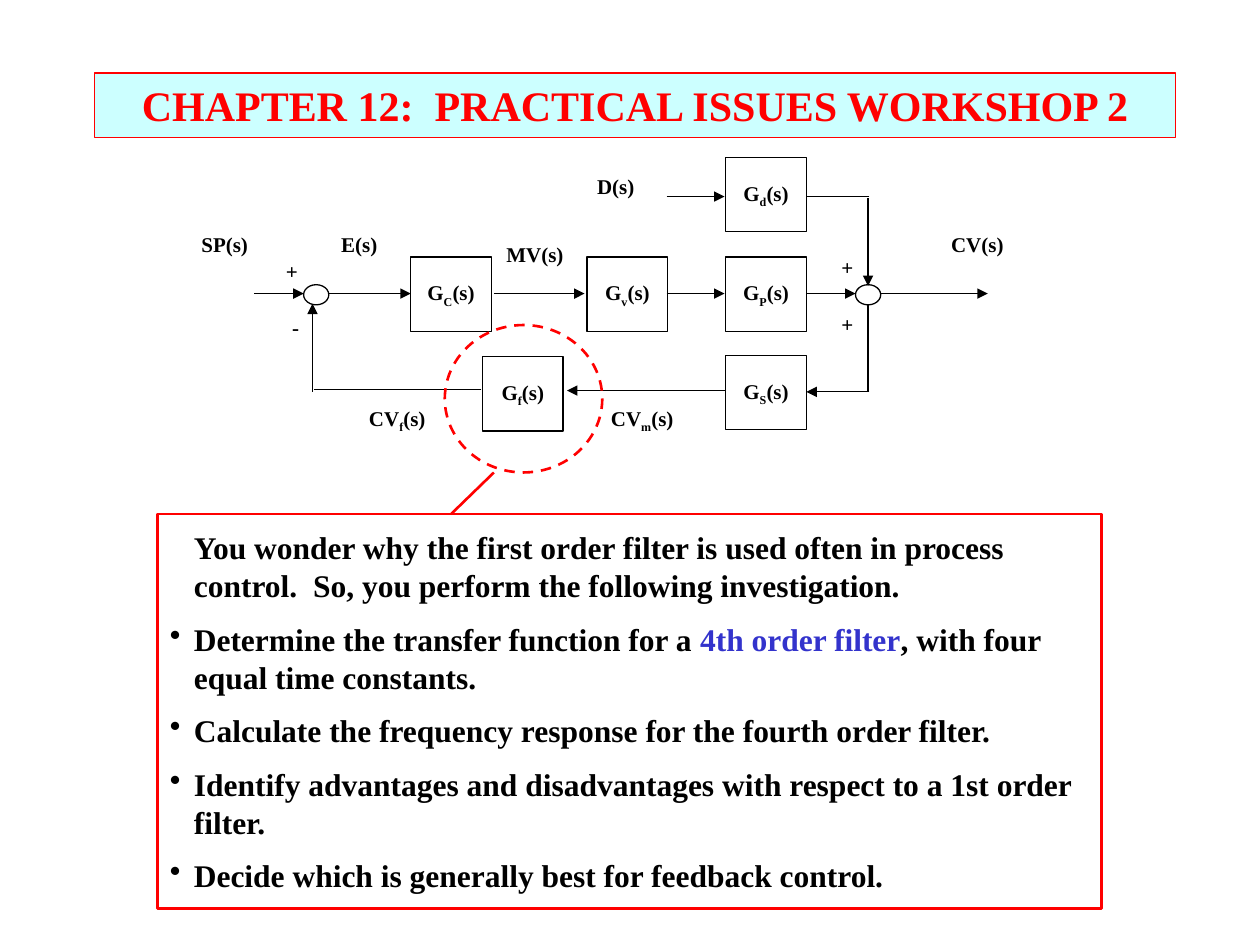
import pptx
import pptx.dml.color
import pptx.enum.dml
import pptx.enum.shapes
import pptx.enum.text
import pptx.oxml
import pptx.oxml.ns
import pptx.util
from dataclasses import dataclass

Inches = pptx.util.Inches
Pt = pptx.util.Pt
RGBColor = pptx.dml.color.RGBColor
ShapeType = pptx.enum.shapes.MSO_SHAPE
Align = pptx.enum.text.PP_ALIGN
Anchor = pptx.enum.text.MSO_ANCHOR


@dataclass(frozen=True)
class Theme:
    font: str = "Times New Roman"
    black: RGBColor = RGBColor(0x00, 0x00, 0x00)
    red: RGBColor = RGBColor(0xFF, 0x00, 0x00)
    blue: RGBColor = RGBColor(0x33, 0x33, 0xCC)
    cyan: RGBColor = RGBColor(0xCC, 0xFF, 0xFF)
    title_size: int = 24
    body_size: int = 18
    label_size: int = 12
    thin: float = 0.75
    thick: float = 1.5


theme = Theme()

presentation = pptx.Presentation()
presentation.slide_width = Inches(10)
presentation.slide_height = Inches(7.5)
slide = presentation.slides.add_slide(presentation.slide_layouts[6])


def add_run(paragraph, text, size, color=theme.black, subscript=False):
    run = paragraph.add_run()
    run.text = text
    run.font.name = theme.font
    run.font.size = Pt(size)
    run.font.bold = True
    run.font.color.rgb = color
    if subscript:
        run._r.get_or_add_rPr().set("baseline", "-25000")


def add_outline(kind, left, top, width, height, color=theme.black, weight=theme.thin):
    shape = slide.shapes.add_shape(
        kind, Inches(left), Inches(top), Inches(width), Inches(height))
    shape.shadow.inherit = False
    shape.fill.background()
    shape.line.color.rgb = color
    shape.line.width = Pt(weight)
    return shape


# Title bar
title = add_outline(ShapeType.RECTANGLE, 0.75, 0.58, 8.58, 0.51, theme.red)
title.fill.solid()
title.fill.fore_color.rgb = theme.cyan
title.text_frame.word_wrap = True
title.text_frame.vertical_anchor = Anchor.TOP
paragraph = title.text_frame.paragraphs[0]
paragraph.alignment = Align.CENTER
add_run(paragraph, "CHAPTER 12:  PRACTICAL ISSUES WORKSHOP 2", theme.title_size, theme.red)

# Transfer function blocks: subscript, left, top
blocks = [
    ("d", 5.76, 1.25), ("P", 5.76, 2.04), ("v", 4.66, 2.04),
    ("C", 3.26, 2.04), ("S", 5.76, 2.82), ("f", 3.83, 2.83),
]
for subscript, left, top in blocks:
    block = add_outline(ShapeType.RECTANGLE, left, top, 0.64, 0.59)
    block.text_frame.word_wrap = False
    block.text_frame.vertical_anchor = Anchor.MIDDLE
    paragraph = block.text_frame.paragraphs[0]
    paragraph.alignment = Align.CENTER
    for text in ("G", subscript, "(s)"):
        add_run(paragraph, text, theme.label_size, subscript=text == subscript)

# Summing junctions
for left in (2.41, 6.79):
    add_outline(ShapeType.OVAL, left, 2.26, 0.2, 0.16)

# Signal lines and filter callout: start, end, has arrowhead, colour, weight
signal = (theme.black, theme.thin)
lines = [
    ((2.02, 2.33), (2.41, 2.33), True, *signal),
    ((2.61, 2.33), (3.26, 2.33), True, *signal),
    ((3.92, 2.33), (4.64, 2.33), True, *signal),
    ((5.29, 2.33), (5.75, 2.33), True, *signal),
    ((6.4, 2.33), (6.79, 2.33), True, *signal),
    ((6.99, 2.33), (7.84, 2.33), True, *signal),
    ((5.29, 1.56), (5.75, 1.56), True, *signal),
    ((6.9, 1.56), (6.4, 1.56), False, *signal),
    ((6.89, 1.57), (6.89, 2.27), True, *signal),
    ((6.89, 3.11), (6.89, 2.41), False, *signal),
    ((6.9, 3.11), (6.4, 3.11), True, *signal),
    ((5.75, 3.1), (4.5, 3.1), True, *signal),
    ((3.82, 3.09), (2.49, 3.09), False, *signal),
    ((2.48, 3.11), (2.48, 2.41), True, *signal),
    ((3.92, 3.75), (3.58, 4.08), False, theme.red, theme.thick),
]
for start, end, has_arrow, color, weight in lines:
    connector = slide.shapes.add_connector(
        pptx.enum.shapes.MSO_CONNECTOR.STRAIGHT,
        *(Inches(value) for value in start + end))
    connector.line.color.rgb = color
    connector.line.width = Pt(weight)
    if has_arrow:
        arrowhead = pptx.oxml.parse_xml(
            f'<a:tailEnd {pptx.oxml.ns.nsdecls("a")} type="triangle"/>')
        connector.line._get_or_add_ln().append(arrowhead)
    connector._element.spPr.append(
        pptx.oxml.parse_xml(f'<a:effectLst {pptx.oxml.ns.nsdecls("a")}/>'))

# Signal names and signs: text parts (the second is a subscript), left, top, width
labels = [
    (("D(s)",), 4.64, 1.33, 0.59),
    (("CV(s)",), 7.45, 1.79, 0.72),
    (("SP(s)",), 1.5, 1.79, 0.72),
    (("E(s)",), 2.61, 1.79, 0.72),
    (("MV(s)",), 3.92, 1.87, 0.85),
    (("CV", "m", "(s)"), 4.75, 3.17, 0.85),
    (("CV", "f", "(s)"), 2.83, 3.17, 0.85),
    (("+",), 6.58, 1.97, 0.3),
    (("+",), 6.58, 2.42, 0.3),
    (("+",), 2.17, 2, 0.3),
    (("-",), 2.22, 2.45, 0.26),
]
for parts, left, top, width in labels:
    label = slide.shapes.add_textbox(Inches(left), Inches(top), Inches(width), Inches(0.3))
    label.text_frame.word_wrap = True
    for position, text in enumerate(parts):
        add_run(label.text_frame.paragraphs[0], text, theme.label_size,
                subscript=position == 1)

# Dashed ring around the filter
ring = add_outline(ShapeType.OVAL, 3.53, 2.58, 1.25, 1.17, theme.red, theme.thick)
ring.line.dash_style = pptx.enum.dml.MSO_LINE.DASH

# Workshop tasks: an introduction, then bullets
tasks = [
    [("You wonder why the first order filter is used often in process control.  "
      "So, you perform the following investigation.", theme.black)],
    [("Determine the transfer function for a ", theme.black),
     ("4th order filter", theme.blue),
     (", with four equal time constants.", theme.black)],
    [("Calculate the frequency response for the fourth order filter.", theme.black)],
    [("Identify advantages and disadvantages with respect to a 1st order filter.",
      theme.black)],
    [("Decide which is generally best for feedback control.", theme.black)],
]
task_box = add_outline(ShapeType.RECTANGLE, 1.25, 4.08, 7.49, 3.13, theme.red, theme.thick)
frame = task_box.text_frame
frame.word_wrap = True
frame.vertical_anchor = Anchor.MIDDLE
for number, task in enumerate(tasks):
    paragraph = frame.add_paragraph() if number else frame.paragraphs[0]
    paragraph.alignment = Align.LEFT
    properties = paragraph._p.get_or_add_pPr()
    properties.set("marL", str(Inches(0.19)))
    if number:
        paragraph.space_before = Pt(9)
        properties.set("indent", str(Inches(-0.19)))
        properties.append(pptx.oxml.parse_xml(
            f'<a:buChar {pptx.oxml.ns.nsdecls("a")} char="•"/>'))
    for text, color in task:
        add_run(paragraph, text, theme.body_size, color)

presentation.save("out.pptx")
